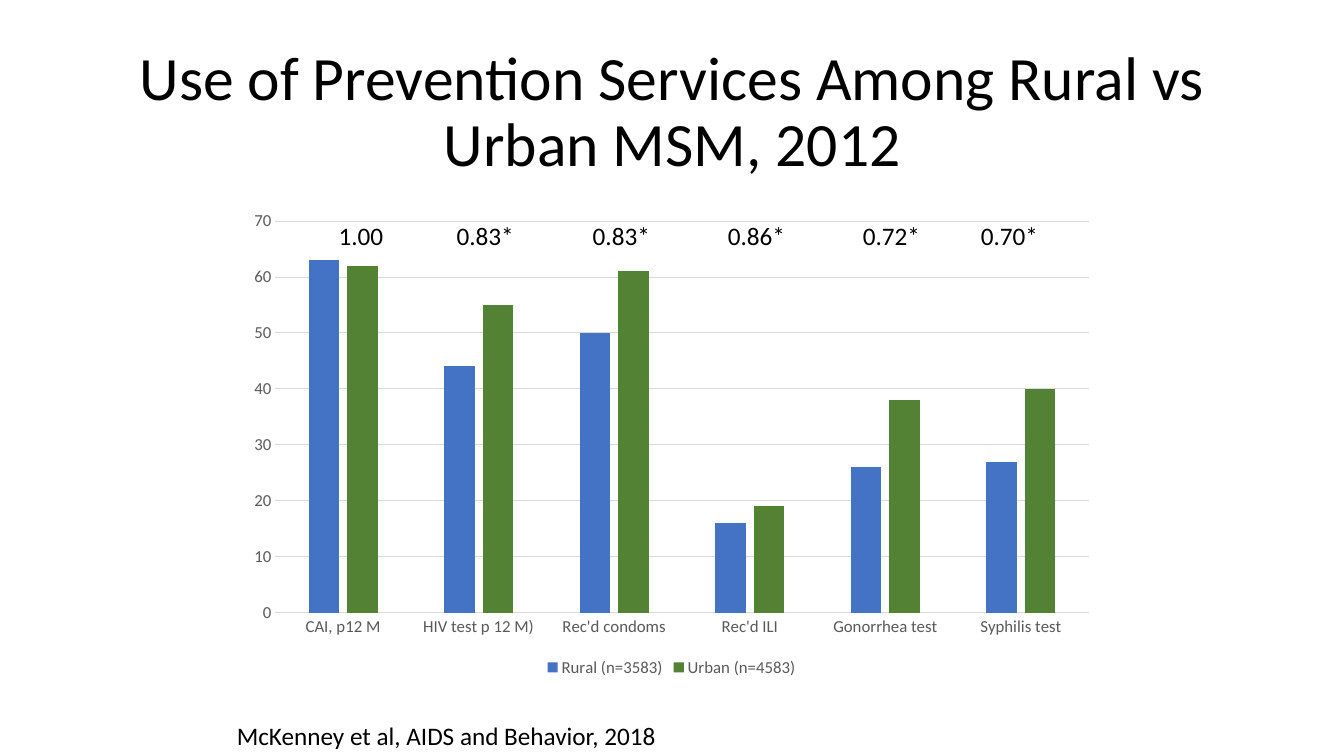
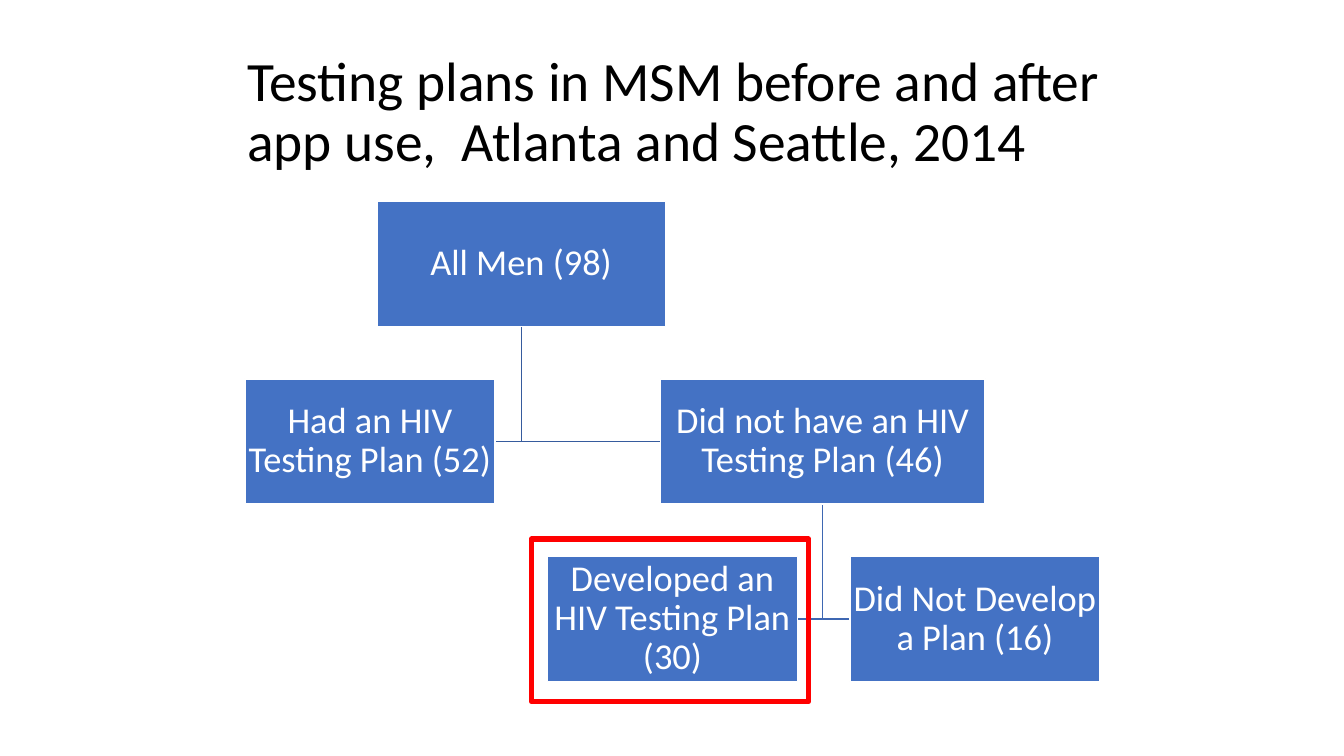
from dataclasses import dataclass
from typing import Any

from lxml import etree
from pptx import Presentation
from pptx.chart.data import CategoryChartData
from pptx.dml.color import RGBColor
from pptx.enum.chart import XL_CHART_TYPE, XL_LEGEND_POSITION, XL_TICK_MARK
from pptx.enum.shapes import MSO_SHAPE
from pptx.enum.text import MSO_ANCHOR, MSO_AUTO_SIZE, PP_ALIGN
from pptx.util import Emu, Pt

EMU_PER_PX = 9144
SLIDE_WIDTH, SLIDE_HEIGHT = 1333, 750
TITLE_ONLY_LAYOUT = 5
FONT = "Calibri"
COLORS = {
    "text": "000000",
    "muted": "595959",
    "grid": "D9D9D9",
    "blue": "4472C4",
    "green": "548235",
    "white": "FFFFFF",
    "upper_link": "365B9D",
    "lower_link": "3E67B2",
    "highlight": "FF0000",
}

CLUSTERED_COLUMN = XL_CHART_TYPE.COLUMN_CLUSTERED
LEGEND_BOTTOM = XL_LEGEND_POSITION.BOTTOM
TICK_NONE = XL_TICK_MARK.NONE
RECTANGLE = MSO_SHAPE.RECTANGLE
MIDDLE = MSO_ANCHOR.MIDDLE
TOP = MSO_ANCHOR.TOP
FIT_NONE = MSO_AUTO_SIZE.NONE
LEFT = PP_ALIGN.LEFT
CENTER = PP_ALIGN.CENTER

TITLE_FRAME = {"word_wrap": True, "auto_size": FIT_NONE, "vertical_anchor": MIDDLE}
NODE_MARGIN = Emu(2 * EMU_PER_PX)
NODE_FRAME = TITLE_FRAME | {
    side: NODE_MARGIN
    for side in ("margin_left", "margin_top", "margin_right", "margin_bottom")
}
LABEL_FRAME = {"word_wrap": True, "auto_size": FIT_NONE, "vertical_anchor": TOP}
SOURCE_FRAME = LABEL_FRAME | {"word_wrap": False}


@dataclass(frozen=True)
class Box:
    left: int
    top: int
    width: int
    height: int

    def emu(self) -> list[Emu]:
        sides = (self.left, self.top, self.width, self.height)
        return [Emu(side * EMU_PER_PX) for side in sides]

    @property
    def center_x(self) -> int:
        return self.left + self.width // 2

    @property
    def middle_y(self) -> int:
        return self.top + self.height // 2


@dataclass(frozen=True)
class Node:
    text: str
    left: int
    level: int
    width: int = 248

    @property
    def box(self) -> Box:
        return Box(self.left, 200 + 176 * self.level, self.width, 124)


@dataclass(frozen=True)
class Series:
    name: str
    values: tuple[int, ...]
    color: str


@dataclass(frozen=True)
class RatioLabel:
    text: str
    left: int


CATEGORIES = (
    "CAI, p12 M",
    "HIV test p 12 M)",
    "Rec'd condoms",
    "Rec'd ILI",
    "Gonorrhea test",
    "Syphilis test",
)
SERIES = (
    Series("Rural (n=3583)", (63, 44, 50, 16, 26, 27), "blue"),
    Series("Urban (n=4583)", (62, 55, 61, 19, 38, 40), "green"),
)
RATIO_LABELS = (
    RatioLabel("1.00", 326),
    RatioLabel("0.83*", 443),
    RatioLabel("0.83*", 578),
    RatioLabel("0.86*", 712),
    RatioLabel("0.72*", 846),
    RatioLabel("0.70*", 963),
)

ALL_MEN = Node("All Men (98)", 374, 0, 286)
HAD_PLAN = Node("Had an HIV Testing Plan (52)", 243, 1)
NO_PLAN = Node("Did not have an HIV Testing Plan (46)", 655, 1, 322)
DEVELOPED = Node("Developed an HIV Testing Plan (30)", 543, 2)
NOT_DEVELOPED = Node("Did Not Develop a Plan (16)", 843, 2)
NODES = (ALL_MEN, HAD_PLAN, NO_PLAN, DEVELOPED, NOT_DEVELOPED)
BRANCHES = (
    (NO_PLAN, NOT_DEVELOPED, "lower_link"),
    (NO_PLAN, DEVELOPED, "lower_link"),
    (ALL_MEN, NO_PLAN, "upper_link"),
    (ALL_MEN, HAD_PLAN, "upper_link"),
)


def rgb(name: str) -> RGBColor:
    return RGBColor.from_string(COLORS[name])


def apply_format(target: Any, values: dict[str, Any]) -> None:
    for name, value in values.items():
        setattr(target, name, value)


def set_font(font: Any, size: float, color: str) -> None:
    apply_format(font, {"name": FONT, "size": Pt(size)})
    font.color.rgb = rgb(color)


def set_line(line: Any, color: str, width: float) -> None:
    line.color.rgb = rgb(color)
    line.width = Pt(width)


def write_text(
    shape: Any,
    text: str,
    size: float,
    frame: dict[str, Any],
    color: str = "text",
    alignment: Any = LEFT,
    line_spacing: float = 1.0,
) -> None:
    apply_format(shape.text_frame, frame)
    paragraph = shape.text_frame.paragraphs[0]
    run = paragraph.add_run()
    run.text = text
    apply_format(paragraph, {"alignment": alignment, "line_spacing": line_spacing})
    set_font(run.font, size, color)


def add_titled_slide(
    presentation: Any, text: str, box: Box, size: float, alignment: Any
) -> Any:
    slide = presentation.slides.add_slide(presentation.slide_layouts[TITLE_ONLY_LAYOUT])
    title = slide.shapes.title
    apply_format(title, dict(zip(("left", "top", "width", "height"), box.emu())))
    write_text(title, text, size, TITLE_FRAME, alignment=alignment, line_spacing=0.9)
    return slide


def add_label(
    slide: Any, text: str, box: Box, frame: dict[str, Any]
) -> None:
    write_text(slide.shapes.add_textbox(*box.emu()), text, 18, frame)


def add_rectangle(
    slide: Any, box: Box, fill: str | None, line: str, width: float
) -> Any:
    shape = slide.shapes.add_shape(RECTANGLE, *box.emu())
    shape.shadow.inherit = False
    if fill:
        shape.fill.solid()
        shape.fill.fore_color.rgb = rgb(fill)
    else:
        shape.fill.background()
    set_line(shape.line, line, width)
    return shape


def add_branch(slide: Any, parent: Box, child: Box, color: str) -> None:
    start_x, start_y = parent.center_x, parent.top + parent.height
    end_x = child.left if child.left > start_x else child.left + child.width
    builder = slide.shapes.build_freeform(start_x, start_y, scale=EMU_PER_PX)
    builder.add_line_segments(
        [(start_x, child.middle_y), (end_x, child.middle_y)], close=False
    )
    shape = builder.convert_to_shape()
    shape.shadow.inherit = False
    shape.fill.background()
    set_line(shape.line, color, 1)


def add_usage_chart(slide: Any, box: Box) -> None:
    data = CategoryChartData()
    data.categories = CATEGORIES
    for series in SERIES:
        data.add_series(series.name, series.values)
    chart = slide.shapes.add_chart(CLUSTERED_COLUMN, *box.emu(), data).chart
    set_font(chart.font, 10, "text")
    apply_format(chart, {"has_title": False, "has_legend": True})
    apply_format(
        chart.legend, {"position": LEGEND_BOTTOM, "include_in_layout": False}
    )
    set_font(chart.legend.font, 12, "muted")

    plot = chart.plots[0]
    apply_format(plot, {"gap_width": 219, "overlap": -27, "vary_by_categories": False})
    for drawn, series in zip(plot.series, SERIES):
        drawn.invert_if_negative = False
        drawn.format.fill.solid()
        drawn.format.fill.fore_color.rgb = rgb(series.color)

    for axis in (chart.category_axis, chart.value_axis):
        apply_format(axis, {"major_tick_mark": TICK_NONE, "minor_tick_mark": TICK_NONE})
        set_font(axis.tick_labels.font, 12, "muted")
    set_line(chart.category_axis.format.line, "grid", 0.75)
    value_axis = chart.value_axis
    apply_format(
        value_axis,
        {
            "minimum_scale": 0,
            "maximum_scale": 70,
            "major_unit": 10,
            "has_major_gridlines": True,
        },
    )
    value_axis.format.line.fill.background()
    set_line(value_axis.major_gridlines.format.line, "grid", 0.75)


def build_services_slide(presentation: Any) -> None:
    slide = add_titled_slide(
        presentation,
        "Use of Prevention Services Among Rural vs Urban MSM, 2012",
        Box(92, 40, 1150, 145),
        44,
        CENTER,
    )
    add_usage_chart(slide, Box(235, 200, 862, 476))
    for label in RATIO_LABELS:
        add_label(slide, label.text, Box(label.left, 214, 87, 41), LABEL_FRAME)
    add_label(
        slide,
        "McKenney et al, AIDS and Behavior, 2018",
        Box(225, 710, 441, 40),
        SOURCE_FRAME,
    )


def build_plans_slide(presentation: Any) -> None:
    slide = add_titled_slide(
        presentation,
        "Testing plans in MSM before and after app use,  Atlanta and Seattle, 2014",
        Box(235, 40, 893, 145),
        39.6,
        LEFT,
    )
    for parent, child, color in BRANCHES:
        add_branch(slide, parent.box, child.box, color)
    for node in NODES:
        shape = add_rectangle(slide, node.box, "blue", "white", 1)
        write_text(shape, node.text, 26, NODE_FRAME, "white", CENTER, 0.9)
    add_rectangle(slide, Box(527, 535, 275, 161), None, "highlight", 4)


def main() -> None:
    presentation = Presentation()
    presentation.slide_width = Emu(SLIDE_WIDTH * EMU_PER_PX)
    presentation.slide_height = Emu(SLIDE_HEIGHT * EMU_PER_PX)
    build_services_slide(presentation)
    build_plans_slide(presentation)
    presentation.save("out.pptx")


if __name__ == "__main__":
    main()
